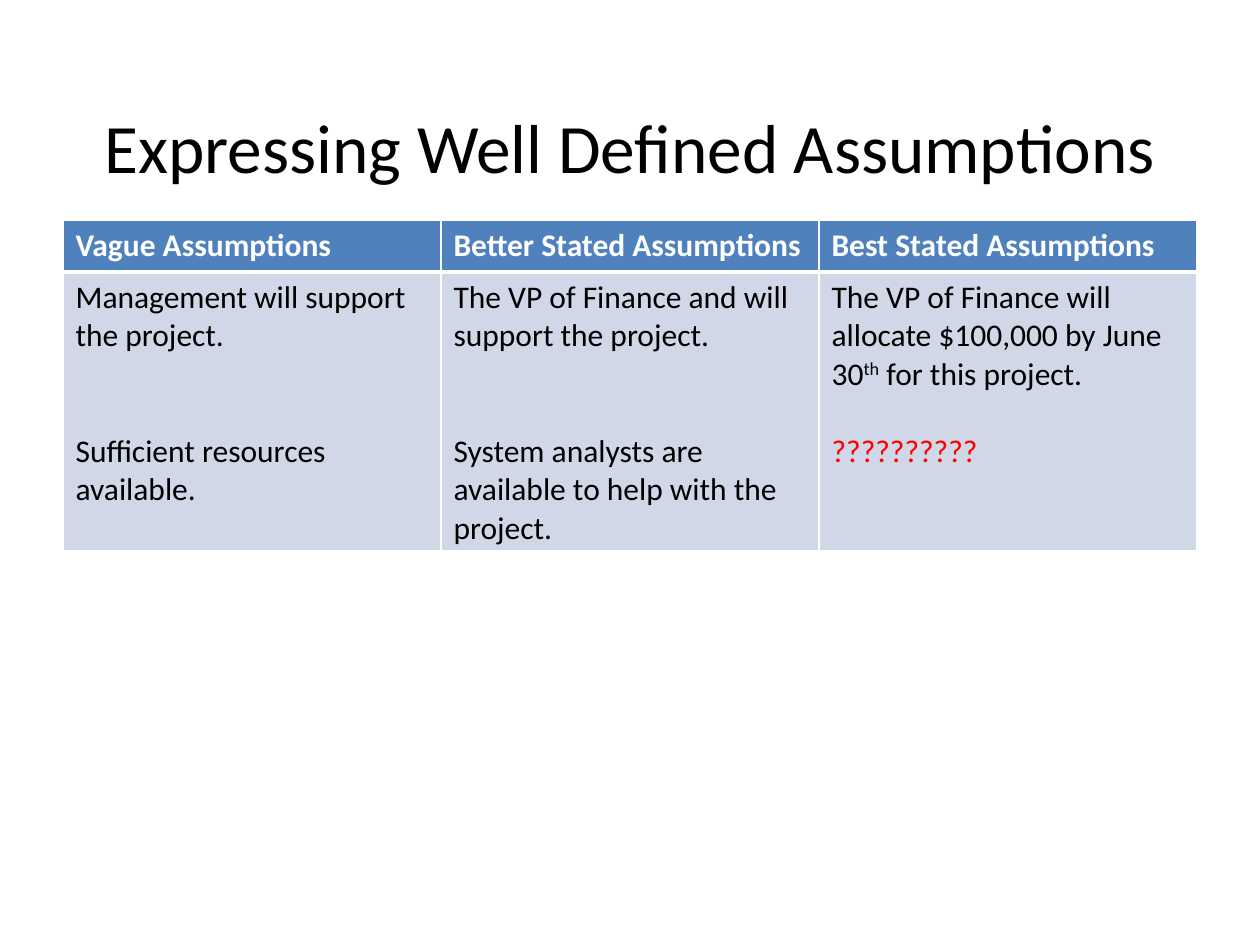
from dataclasses import dataclass

from lxml.etree import SubElement
from pptx import Presentation
from pptx.dml.color import RGBColor as Color
from pptx.enum.text import MSO_ANCHOR as Anchor, PP_ALIGN as Align
from pptx.oxml.ns import qn
from pptx.util import Inches, Pt

TITLE = "Expressing Well Defined Assumptions"
HEADERS = ["Vague Assumptions", "Better Stated Assumptions", "Best Stated Assumptions"]
ASSUMPTIONS = [
    [
        {"runs": [("Management will support the project.", "normal")]},
        {"runs": [("Sufficient resources available.", "normal")], "gap_lines": 2},
    ],
    [
        {"runs": [("The VP of Finance and will support the project.", "normal")]},
        {"runs": [("System analysts are available to help with the project.", "normal")], "gap_lines": 2},
    ],
    [
        {"runs": [
            ("The VP of Finance will allocate $100,000 by June 30", "normal"),
            ("th", "superscript"),
            (" for this project.", "normal"),
        ]},
        {"runs": [("??????????", "question")], "gap_lines": 1},
    ],
]


@dataclass(frozen=True)
class Theme:
    font: str = "Calibri"
    title_size: float = 39.6
    table_size: float = 18
    line_height: float = 22
    text: str = "000000"
    question: str = "FF0000"
    light: str = "FFFFFF"
    header_fill: str = "4F81BD"
    body_fill: str = "D0D8E8"
    thin_border: float = 1
    thick_border: float = 3


THEME = Theme()
SLIDE_WIDTH, SLIDE_HEIGHT = 10, 7.5
MARGIN = SLIDE_WIDTH * 0.05
CONTENT_WIDTH = SLIDE_WIDTH - 2 * MARGIN
TITLE_TOP, TITLE_HEIGHT = 0.76, 0.79
TABLE_TOP = 1.75
ROW_HEIGHTS = [0.41, 2.2]


def add_run(paragraph, text, size, color, bold=False):
    run = paragraph.add_run()
    run.text = text
    run.font.name = THEME.font
    run.font.size = Pt(size)
    run.font.bold = bold
    run.font.color.rgb = Color.from_string(color)
    return run


def style_cell(cell, fill, borders):
    properties = cell._tc.get_or_add_tcPr()
    for side, width in borders.items():
        line = SubElement(properties, qn(f"a:ln{side}"), w=str(Pt(width)))
        solid = SubElement(line, qn("a:solidFill"))
        SubElement(solid, qn("a:srgbClr"), val=THEME.light)
    cell.fill.solid()
    cell.fill.fore_color.rgb = Color.from_string(fill)


def add_title(slide):
    shape = slide.shapes.add_textbox(
        Inches(MARGIN), Inches(TITLE_TOP), Inches(CONTENT_WIDTH), Inches(TITLE_HEIGHT)
    )
    frame = shape.text_frame
    frame.word_wrap = True
    frame.vertical_anchor = Anchor.MIDDLE
    paragraph = frame.paragraphs[0]
    paragraph.alignment = Align.CENTER
    add_run(paragraph, TITLE, THEME.title_size, THEME.text)


def fill_body_cell(cell, entries):
    frame = cell.text_frame
    for index, entry in enumerate(entries):
        paragraph = frame.add_paragraph() if index else frame.paragraphs[0]
        if index:
            paragraph.space_before = Pt(entry["gap_lines"] * THEME.line_height)
        for text, kind in entry["runs"]:
            color = THEME.question if kind == "question" else THEME.text
            run = add_run(paragraph, text, THEME.table_size, color)
            if kind == "superscript":
                run.font._element.set("baseline", "30000")


def add_assumption_table(slide):
    table = slide.shapes.add_table(
        len(ROW_HEIGHTS), len(HEADERS),
        Inches(MARGIN), Inches(TABLE_TOP), Inches(CONTENT_WIDTH), Inches(sum(ROW_HEIGHTS)),
    ).table
    for row, height in zip(table.rows, ROW_HEIGHTS):
        row.height = Inches(height)
    thin = dict.fromkeys("LRTB", THEME.thin_border)
    for column, (header, entries) in enumerate(zip(HEADERS, ASSUMPTIONS)):
        header_cell, body_cell = table.cell(0, column), table.cell(1, column)
        style_cell(header_cell, THEME.header_fill, {**thin, "B": THEME.thick_border})
        style_cell(body_cell, THEME.body_fill, {**thin, "T": THEME.thick_border})
        add_run(header_cell.text_frame.paragraphs[0], header, THEME.table_size, THEME.light, bold=True)
        fill_body_cell(body_cell, entries)


def main():
    presentation = Presentation()
    presentation.slide_width = Inches(SLIDE_WIDTH)
    presentation.slide_height = Inches(SLIDE_HEIGHT)
    slide = presentation.slides.add_slide(presentation.slide_layouts[6])
    add_title(slide)
    add_assumption_table(slide)
    presentation.save("out.pptx")


if __name__ == "__main__":
    main()
